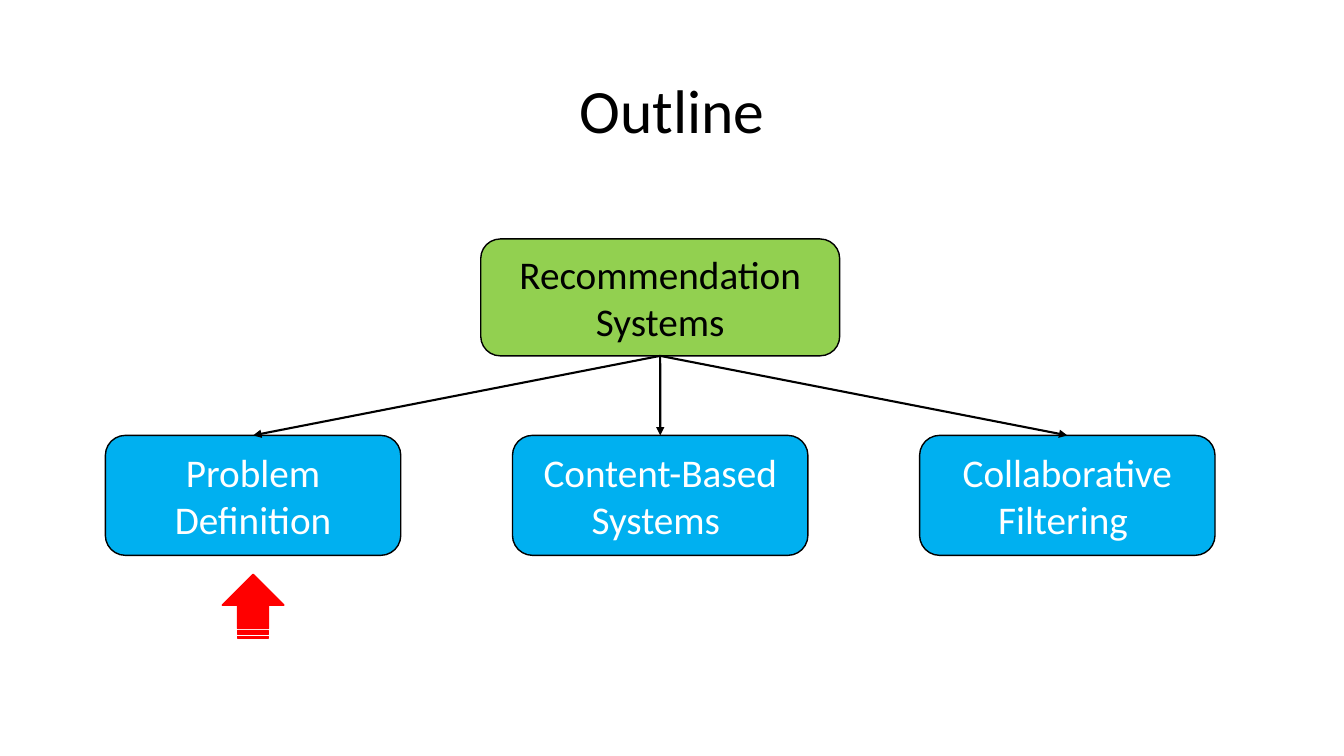
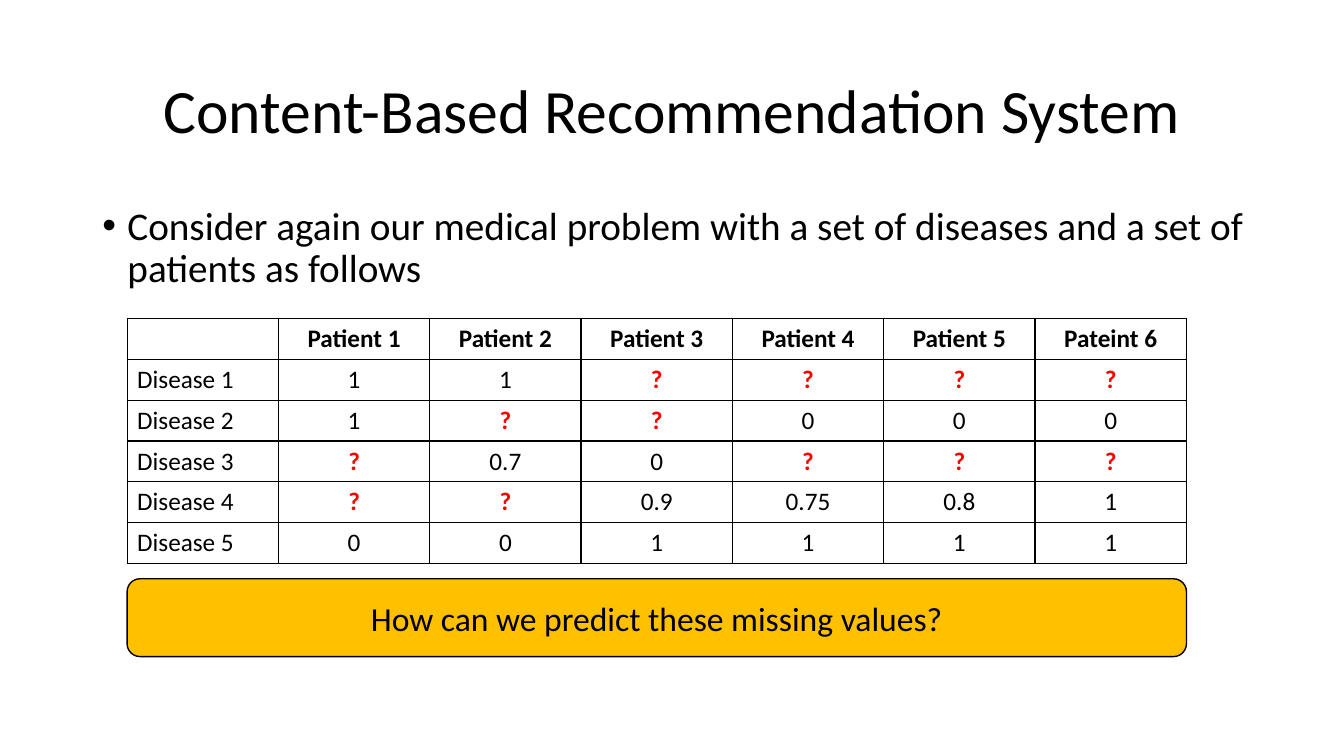
from dataclasses import dataclass

from lxml import etree
from pptx import Presentation
from pptx.dml.color import RGBColor
from pptx.enum.shapes import MSO_CONNECTOR, MSO_SHAPE
from pptx.enum.text import MSO_ANCHOR, PP_ALIGN
from pptx.oxml.ns import qn
from pptx.shapes.autoshape import Shape
from pptx.slide import Slide
from pptx.table import _Cell
from pptx.text.text import _Paragraph
from pptx.util import Pt

CENTER, LEFT = PP_ALIGN.CENTER, PP_ALIGN.LEFT
MIDDLE = MSO_ANCHOR.MIDDLE
ROUNDED, STRIPED_ARROW = MSO_SHAPE.ROUNDED_RECTANGLE, MSO_SHAPE.STRIPED_RIGHT_ARROW
STRAIGHT = MSO_CONNECTOR.STRAIGHT
TITLE_ONLY = 5
TOP_SITE, BOTTOM_SITE = 0, 2

FONT = "Calibri"
COLORS = {
    "ink": "000000",
    "paper": "FFFFFF",
    "root": "92D050",
    "topic": "00B0F0",
    "question": "FFC000",
    "alert": "FF0000",
}


@dataclass(frozen=True)
class Box:
    """A place on the slide, in points."""
    left: float
    top: float
    width: float
    height: float

    def lengths(self) -> tuple[Pt, Pt, Pt, Pt]:
        return Pt(self.left), Pt(self.top), Pt(self.width), Pt(self.height)


@dataclass(frozen=True)
class Label:
    text: str
    fill: str
    ink: str
    size: float = 28


TITLE_BOX = Box(66, 28.8, 828, 104.4)

TREE_CENTER = 471.6
ROOT = Label("Recommendation Systems", "root", "ink")
ROOT_BOX = Box(TREE_CENTER - 128.2, 170.7, 256.4, 83.5)
TOPICS = [
    Label("Problem Definition", "topic", "paper"),
    Label("Content-Based Systems ", "topic", "paper"),
    Label("Collaborative Filtering ", "topic", "paper"),
]
TOPIC_PITCH, TOPIC_TOP, TOPIC_WIDTH, TOPIC_HEIGHT = 290.8, 311, 211, 85.7
MARKER_BOX = Box(TREE_CENTER - TOPIC_PITCH - 22.8, 411, 45.6, 44)

INTRO = ("Consider again our medical problem with a set of diseases "
         "and a set of patients as follows")
INTRO_BOX = Box(66, 144, 844, 72)
TABLE_BOX = Box(90.8, 227.4, 756.7, 175.2)
RATINGS = [
    ["", "Patient 1", "Patient 2", "Patient 3", "Patient 4", "Patient 5", "Pateint 6"],
    ["Disease 1", "1", "1", "?", "?", "?", "?"],
    ["Disease 2", "1", "?", "?", "0", "0", "0"],
    ["Disease 3", "?", "0.7", "0", "?", "?", "?"],
    ["Disease 4", "?", "?", "0.9", "0.75", "0.8", "1"],
    ["Disease 5", "0", "0", "1", "1", "1", "1"],
]
QUESTION = Label("How can we predict these missing values?", "question", "ink", 24)
QUESTION_BOX = Box(TABLE_BOX.left, 413.4, TABLE_BOX.width, 55.6)


def rgb(name: str) -> RGBColor:
    return RGBColor.from_string(COLORS[name])


def style(paragraph: _Paragraph, size: float, ink: str = "ink",
          align: PP_ALIGN = CENTER, bold: bool = False) -> None:
    paragraph.alignment = align
    font = paragraph.font
    font.name, font.size, font.bold = FONT, Pt(size), bold
    font.color.rgb = rgb(ink)


def add_titled_slide(deck: Presentation, text: str) -> Slide:
    slide = deck.slides.add_slide(deck.slide_layouts[TITLE_ONLY])
    title = slide.shapes.title
    title.left, title.top, title.width, title.height = TITLE_BOX.lengths()
    frame = title.text_frame
    frame.text = text
    frame.vertical_anchor = MIDDLE
    frame.paragraphs[0].line_spacing = 0.9
    style(frame.paragraphs[0], 44)
    return slide


def add_flat_shape(slide: Slide, kind: MSO_SHAPE, box: Box, fill: str, line: str) -> Shape:
    shape = slide.shapes.add_shape(kind, *box.lengths())
    shape.shadow.inherit = False
    shape.fill.solid()
    shape.fill.fore_color.rgb = rgb(fill)
    shape.line.color.rgb = rgb(line)
    shape.line.width = Pt(1)
    return shape


def add_label(slide: Slide, label: Label, box: Box) -> Shape:
    shape = add_flat_shape(slide, ROUNDED, box, label.fill, "ink")
    frame = shape.text_frame
    frame.text = label.text
    frame.word_wrap = True
    frame.vertical_anchor = MIDDLE
    style(frame.paragraphs[0], label.size, label.ink)
    return shape


def add_branch(slide: Slide, parent: Shape, child: Shape) -> None:
    """Draw an arrow from the bottom of parent to the top of child."""
    branch = slide.shapes.add_connector(STRAIGHT, 0, 0, 0, 0)
    branch.begin_connect(parent, BOTTOM_SITE)
    branch.end_connect(child, TOP_SITE)
    branch.line.color.rgb = rgb("ink")
    branch.line.width = Pt(1.5)
    properties = branch.element.spPr
    etree.SubElement(properties.find(qn("a:ln")), qn("a:tailEnd"), type="triangle")
    etree.SubElement(properties, qn("a:effectLst"))


def add_bullet_text(slide: Slide, text: str, box: Box) -> None:
    frame = slide.shapes.add_textbox(*box.lengths()).text_frame
    frame.word_wrap = True
    frame.text = text
    paragraph = frame.paragraphs[0]
    properties = paragraph._p.get_or_add_pPr()
    properties.set("marL", str(Pt(18)))
    properties.set("indent", str(-Pt(18)))
    etree.SubElement(properties, qn("a:buFont"), typeface="Arial")
    etree.SubElement(properties, qn("a:buChar"), char="•")
    paragraph.line_spacing = 0.9
    paragraph.space_before = Pt(10)
    style(paragraph, 28, align=LEFT)


def outline_cell(cell: _Cell) -> None:
    properties = cell._tc.get_or_add_tcPr()
    for position, side in enumerate(("lnL", "lnR", "lnT", "lnB")):
        border = etree.Element(qn(f"a:{side}"), w=str(Pt(1)))
        fill = etree.SubElement(border, qn("a:solidFill"))
        etree.SubElement(fill, qn("a:srgbClr"), val=COLORS["ink"])
        properties.insert(position, border)


def add_ratings(slide: Slide, ratings: list[list[str]], box: Box) -> None:
    row_count, column_count = len(ratings), len(ratings[0])
    table = slide.shapes.add_table(row_count, column_count, *box.lengths()).table
    table.first_row = table.horz_banding = False
    for column in table.columns:
        column.width = Pt(box.width / column_count)
    for row in table.rows:
        row.height = Pt(box.height / row_count)
    for row_index, values in enumerate(ratings):
        for column_index, value in enumerate(values):
            cell = table.cell(row_index, column_index)
            cell.text = value
            cell.fill.background()
            outline_cell(cell)
            missing = value == "?"
            style(cell.text_frame.paragraphs[0], 18,
                  ink="alert" if missing else "ink",
                  align=CENTER if column_index else LEFT,
                  bold=missing or row_index == 0)


def build_outline(deck: Presentation) -> None:
    slide = add_titled_slide(deck, "Outline")
    root = add_label(slide, ROOT, ROOT_BOX)
    for index, topic in enumerate(TOPICS):
        center = TREE_CENTER + (index - 1) * TOPIC_PITCH
        box = Box(center - TOPIC_WIDTH / 2, TOPIC_TOP, TOPIC_WIDTH, TOPIC_HEIGHT)
        add_branch(slide, root, add_label(slide, topic, box))
    marker = add_flat_shape(slide, STRIPED_ARROW, MARKER_BOX, "alert", "alert")
    marker.rotation = 270


def build_ratings(deck: Presentation) -> None:
    slide = add_titled_slide(deck, "Content-Based Recommendation System")
    add_bullet_text(slide, INTRO, INTRO_BOX)
    add_ratings(slide, RATINGS, TABLE_BOX)
    add_label(slide, QUESTION, QUESTION_BOX)


def main() -> None:
    deck = Presentation()
    deck.slide_width, deck.slide_height = Pt(960), Pt(540)
    build_outline(deck)
    build_ratings(deck)
    deck.save("out.pptx")


if __name__ == "__main__":
    main()
